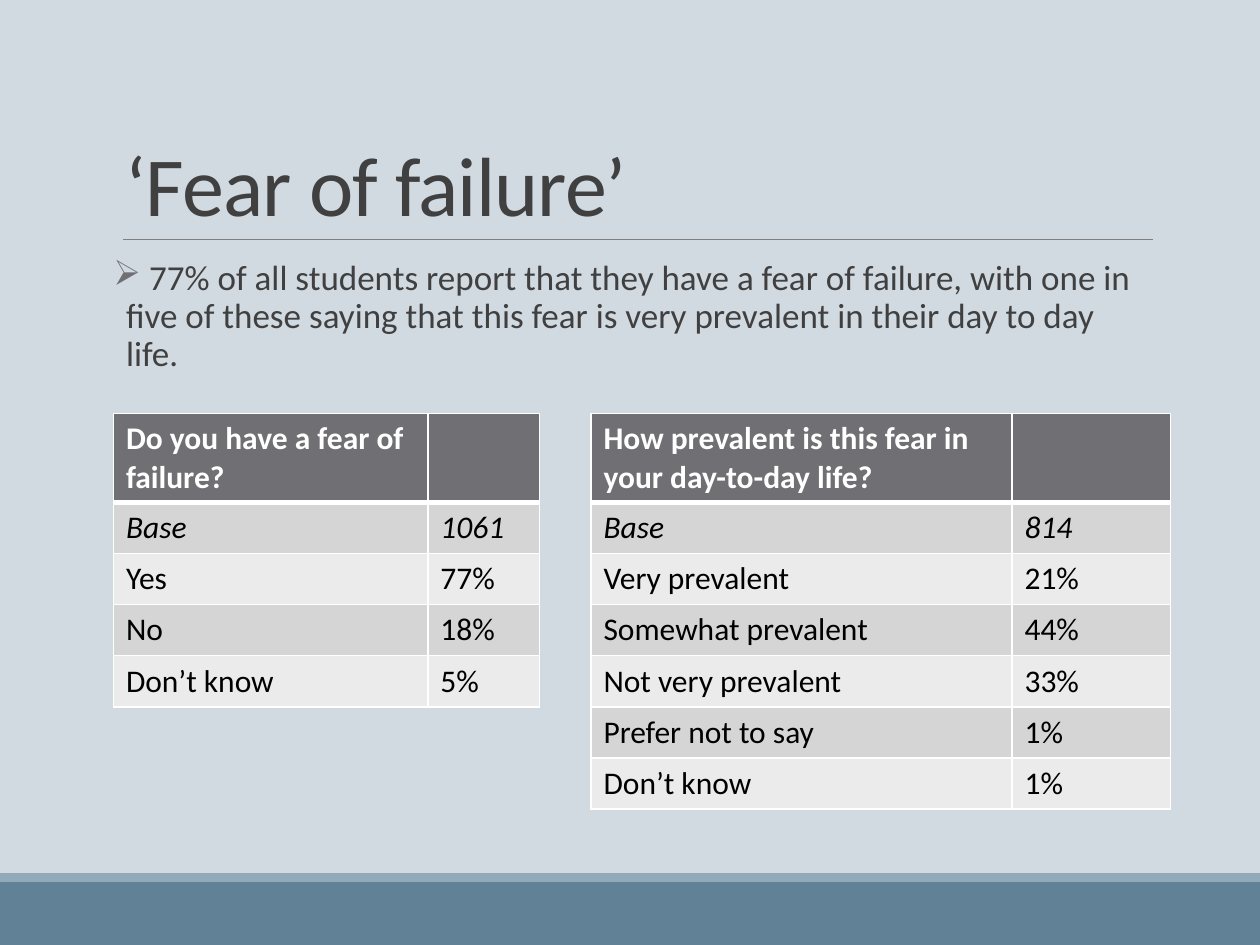
from lxml import etree
from pptx import Presentation
from pptx.dml.color import RGBColor
from pptx.enum.shapes import MSO_CONNECTOR, MSO_SHAPE
from pptx.enum.text import MSO_ANCHOR
from pptx.oxml.ns import qn
from pptx.util import Pt

RECTANGLE = MSO_SHAPE.RECTANGLE
STRAIGHT = MSO_CONNECTOR.STRAIGHT
TOP, BOTTOM = MSO_ANCHOR.TOP, MSO_ANCHOR.BOTTOM

FONT = "Calibri"
WHITE, BLACK, GREY, DARK = "FFFFFF", "000000", "6F6F74", "404040"
BANDS = ("D5D5D6", "EBEBEB")
TABLE_TOP = 236.3
HEADER_HEIGHT, ROW_HEIGHT = 50.8, 29.2

FEAR_ROWS = [
    ("Do you have a fear of failure?", ""),
    ("Base", "1061"),
    ("Yes", "77%"),
    ("No", "18%"),
    ("Don’t know", "5%"),
]
PREVALENCE_ROWS = [
    ("How prevalent is this fear in your day-to-day life?", ""),
    ("Base", "814"),
    ("Very prevalent", "21%"),
    ("Somewhat prevalent", "44%"),
    ("Not very prevalent", "33%"),
    ("Prefer not to say", "1%"),
    ("Don’t know", "1%"),
]


def color(value):
    return RGBColor.from_string(value)


def set_all(target, values):
    for name, value in values.items():
        setattr(target, name, value)


def add_child(parent, tag, **attributes):
    return etree.SubElement(parent, qn(tag), attributes)


def write(para, text, size, hex_color, **format_values):
    span = para.add_run()
    span.text = text
    set_all(span.font, {"name": FONT, "size": Pt(size), **format_values})
    span.font.color.rgb = color(hex_color)
    return span


def add_band(page, top, height, fill):
    band = page.shapes.add_shape(RECTANGLE, 0, Pt(top), Pt(720), Pt(height))
    band.shadow.inherit = False
    band.fill.solid()
    band.fill.fore_color.rgb = color(fill)
    band.line.fill.background()


def add_rule(page, left, right, y):
    rule = page.shapes.add_connector(STRAIGHT, Pt(left), Pt(y), Pt(right), Pt(y))
    rule.line.width = Pt(0.5)
    rule.line.color.rgb = color("808080")
    add_child(rule._element.spPr, "a:effectLst")


def add_text_box(page, top, height, frame_values, para_values):
    """Add a wrapped box in the main column and return its first paragraph."""
    box = page.shapes.add_textbox(Pt(64.8), Pt(top), Pt(594), Pt(height))
    set_all(box.text_frame, {"word_wrap": True, **frame_values})
    para = box.text_frame.paragraphs[0]
    set_all(para, para_values)
    return para


def add_bullet(para, character, hex_color, indent):
    properties = para._p.get_or_add_pPr()
    properties.set("marL", str(Pt(indent)))
    properties.set("indent", str(Pt(-indent)))
    add_child(add_child(properties, "a:buClr"), "a:srgbClr", val=hex_color)
    add_child(properties, "a:buChar", char=character)


def style_cell(cell, fill, top_width, bottom_width):
    """Set white borders, then the fill, in the order the schema asks for."""
    properties = cell._tc.get_or_add_tcPr()
    widths = {"L": 1, "R": 1, "T": top_width, "B": bottom_width}
    for side, width in widths.items():
        line = add_child(properties, f"a:ln{side}", w=str(Pt(width)))
        add_child(add_child(line, "a:solidFill"), "a:srgbClr", val=WHITE)
    cell.fill.solid()
    cell.fill.fore_color.rgb = color(fill)


def add_data_table(page, left, column_widths, rows):
    heights = [HEADER_HEIGHT] + [ROW_HEIGHT] * (len(rows) - 1)
    table = page.shapes.add_table(
        len(rows), len(column_widths), Pt(left), Pt(TABLE_TOP),
        Pt(sum(column_widths)), Pt(sum(heights)),
    ).table
    for column, width in zip(table.columns, column_widths):
        column.width = Pt(width)
    for index, values in enumerate(rows):
        table.rows[index].height = Pt(heights[index])
        header = index == 0
        fill = GREY if header else BANDS[(index - 1) % 2]
        for cell, text in zip(table.rows[index].cells, values):
            style_cell(cell, fill, 3 if index == 1 else 1, 3 if header else 1)
            if text:
                write(cell.text_frame.paragraphs[0], text, 18,
                      WHITE if header else BLACK, bold=header, italic=index == 1)


def main():
    deck = Presentation()
    set_all(deck, {"slide_width": Pt(720), "slide_height": Pt(540)})
    page = deck.slides.add_slide(deck.slide_layouts[6])
    page.background.fill.solid()
    page.background.fill.fore_color.rgb = color("D1D9E1")

    add_band(page, 504, 36, "618197")
    add_band(page, 499, 5, "92A9B9")
    add_rule(page, 70.5, 658.8, 136.8)

    title = add_text_box(page, 22.3, 114.5, {"vertical_anchor": BOTTOM},
                         {"line_spacing": 0.85})
    span = write(title, "‘Fear of failure’", 48, DARK)
    span.font._element.set("spc", "-50")

    body = add_text_box(
        page, 145.4, 317,
        {"vertical_anchor": TOP, "margin_left": 0, "margin_right": 0},
        {"line_spacing": 0.9, "space_before": Pt(12), "space_after": Pt(2)},
    )
    add_bullet(body, "➢", GREY, 7.2)
    write(body, " 77% of all students report that they have a fear of failure, "
                "with one in five of these saying that this fear is very "
                "prevalent in their day to day life.", 20, DARK)

    add_data_table(page, 64.8, (179.7, 63.8), FEAR_ROWS)
    add_data_table(page, 337.7, (240.6, 90.6), PREVALENCE_ROWS)
    deck.save("out.pptx")


if __name__ == "__main__":
    main()
